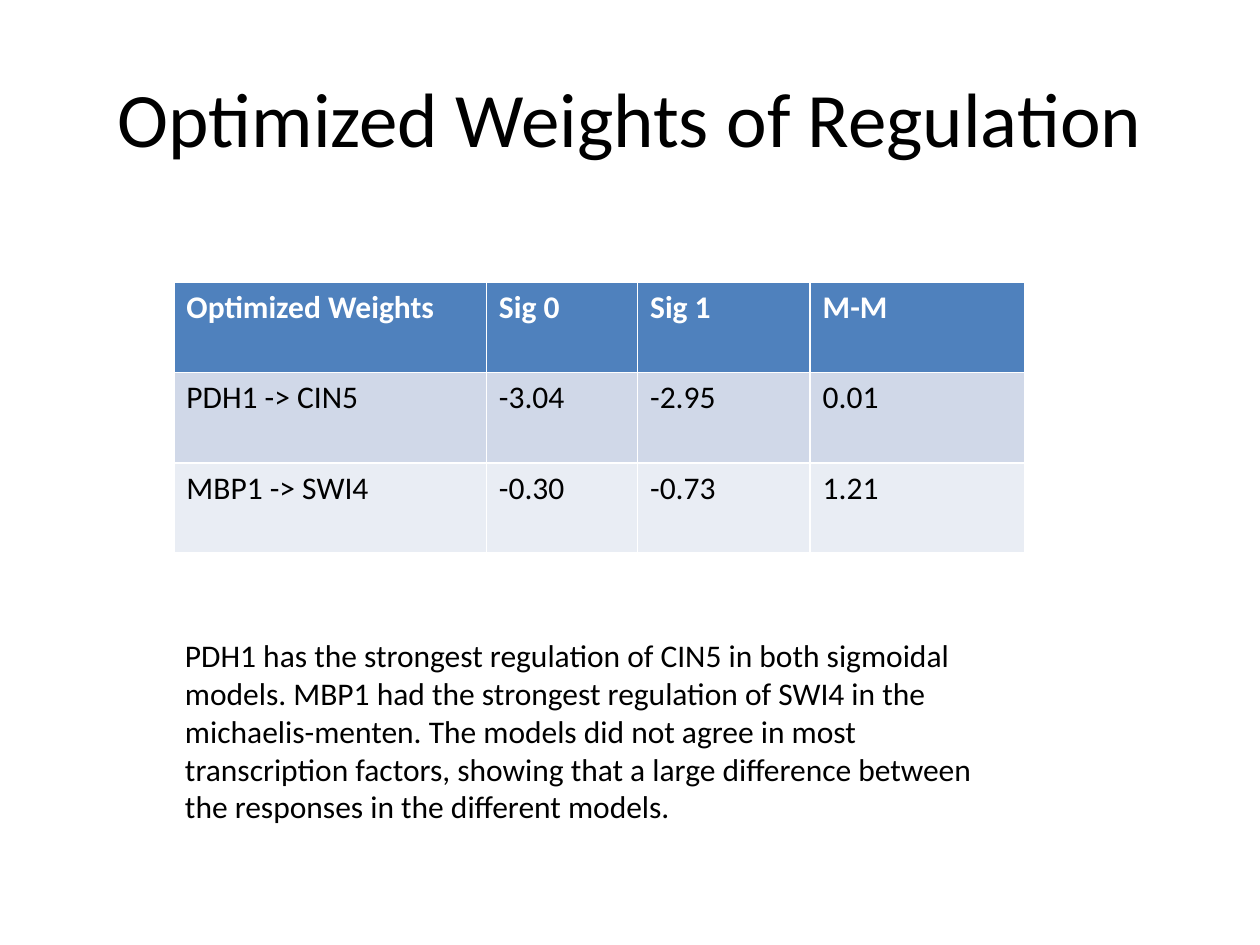
from dataclasses import dataclass

from pptx import Presentation
from pptx.dml.color import RGBColor as RGB
from pptx.enum.text import MSO_ANCHOR as Anchor, MSO_AUTO_SIZE as Fit, PP_ALIGN as Align
from pptx.util import Inches, Pt


@dataclass(frozen=True)
class Theme:
    font: str = "Calibri"
    ink: str = "000000"
    paper: str = "FFFFFF"
    head: str = "4F81BD"
    bands: tuple = ("D0D8E8", "E9EDF4")
    big: int = 44
    body: int = 18


class Deck:
    """Holds the theme and current slide; boxes are inches on a 10 x 7.5 grid."""

    def __init__(self, theme):
        self.theme = theme
        self.prs = Presentation()
        self.prs.slide_width, self.prs.slide_height = Inches(10), Inches(7.5)
        self.slide = self.prs.slides.add_slide(self.prs.slide_layouts[5])
        self.slide.background.fill.solid()
        self.slide.background.fill.fore_color.rgb = RGB.from_string(theme.paper)

    def label(self, frame, text, size, color, bold=False, align=Align.LEFT):
        frame.text = text
        for par in frame.paragraphs:
            par.alignment = align
            for run in par.runs:
                font = run.font
                font.name, font.size, font.bold = self.theme.font, Pt(size), bold
                font.color.rgb = RGB.from_string(color)

    def title(self, text, box):
        shape = self.slide.shapes.title
        shape.left, shape.top, shape.width, shape.height = map(Inches, box)
        shape.text_frame.vertical_anchor = Anchor.MIDDLE
        self.label(shape.text_frame, text, self.theme.big, self.theme.ink, align=Align.CENTER)

    def note(self, text, box):
        frame = self.slide.shapes.add_textbox(*map(Inches, box)).text_frame
        frame.word_wrap = True
        frame.auto_size = Fit.SHAPE_TO_FIT_TEXT
        self.label(frame, text, self.theme.body, self.theme.ink)

    def table(self, rows, widths, left, top, height):
        """Header row first, then rows in alternating bands."""
        look = self.theme
        grid = self.slide.shapes.add_table(
            len(rows), len(widths), Inches(left), Inches(top),
            Inches(sum(widths)), Inches(height)).table
        for col, width in zip(grid.columns, widths):
            col.width = Inches(width)
        for i, row in enumerate(rows):
            head = i == 0
            fill = look.head if head else look.bands[(i - 1) % 2]
            ink = look.paper if head else look.ink
            for j, text in enumerate(row):
                cell = grid.cell(i, j)
                cell.fill.solid()
                cell.fill.fore_color.rgb = RGB.from_string(fill)
                self.label(cell.text_frame, text, look.body, ink, bold=head)


def main():
    deck = Deck(Theme())
    deck.table(
        [("Optimized Weights", "Sig 0", "Sig 1", "M-M"),
         ("PDH1 -> CIN5", "-3.04", "-2.95", "0.01"),
         ("MBP1 -> SWI4", "-0.30", "-0.73", "1.21")],
        widths=(2.48, 1.2, 1.37, 1.7), left=1.38, top=2.24, height=2.15)
    deck.title("Optimized Weights of Regulation", (0.5, 0.3, 9, 1.25))
    deck.note(
        "PDH1 has the strongest regulation of CIN5 in both sigmoidal models. "
        "MBP1 had the strongest regulation of SWI4 in the michaelis-menten. "
        "The models did not agree in most transcription factors, showing that "
        "a large difference between the responses in the different models.",
        (1.37, 5, 6.76, 1.62))
    deck.prs.save("out.pptx")


if __name__ == "__main__":
    main()
